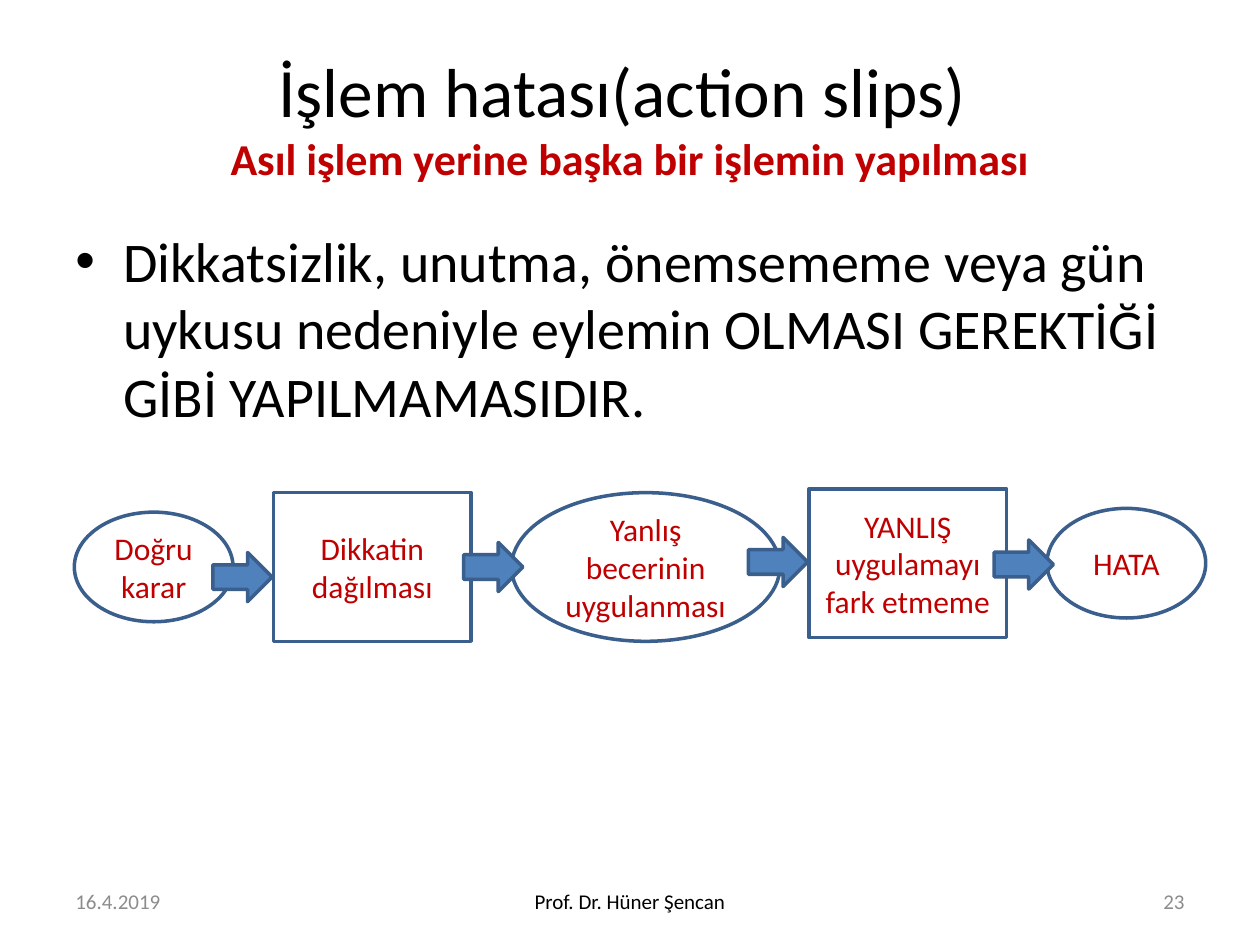
from lxml import etree
from pptx import Presentation
from pptx.dml.color import RGBColor
from pptx.enum.shapes import MSO_SHAPE
from pptx.enum.text import MSO_ANCHOR, PP_ALIGN
from pptx.oxml.ns import qn
from pptx.util import Inches, Pt

OVAL, BOX, ARROW = MSO_SHAPE.OVAL, MSO_SHAPE.RECTANGLE, MSO_SHAPE.RIGHT_ARROW
TOP, MIDDLE = MSO_ANCHOR.TOP, MSO_ANCHOR.MIDDLE
LEFT, CENTER, RIGHT = PP_ALIGN.LEFT, PP_ALIGN.CENTER, PP_ALIGN.RIGHT

FONT = "Calibri"
BLACK, RED, GRAY = "000000", "C00000", "8C8C8C"
BLUE, OUTLINE = "4F81BD", "3A5F8C"
WIDTH, HEIGHT, MARGIN = 10, 7.5, 0.5
CONTENT = WIDTH - 2 * MARGIN

TITLE = "İşlem hatası(action slips) "
SUBTITLE = "Asıl işlem yerine başka bir işlemin yapılması"
BODY = ("Dikkatsizlik, unutma, önemsememe veya gün uykusu nedeniyle "
        "eylemin OLMASI GEREKTİĞİ GİBİ YAPILMAMASIDIR.")
# text, width, alignment, colour
FOOTER = [
    ("16.4.2019", 2.33, LEFT, GRAY),
    ("Prof. Dr. Hüner Şencan", 3.17, CENTER, BLACK),
    ("23", 2.33, RIGHT, GRAY),
]
FOOTER_TOP, FOOTER_HEIGHT = 6.95, 0.4

SMALL, TALL, LARGE = (1.26, 0.87), (1.57, 1.18), (2.13, 1.18)
# text, outline, size, left, middle line
STEPS = [
    ("Doğru karar", OVAL, SMALL, 0.59, 4.5),
    ("Dikkatin dağılması", BOX, TALL, 2.17, 4.5),
    ("Yanlış becerinin uygulanması", OVAL, LARGE, 4.06, 4.5),
    ("YANLIŞ uygulamayı fark etmeme", BOX, TALL, 6.42, 4.47),
    ("HATA", OVAL, SMALL, 8.31, 4.47),
]
ARROW_SIZE = (0.47, 0.39)
ARROWS = [(1.69, 4.58), (3.68, 4.5), (5.94, 4.46), (7.89, 4.48)]  # left, middle line


def color(value):
    return RGBColor.from_string(value)


def add_run(paragraph, text, size, ink, bold=False):
    run = paragraph.add_run()
    run.text = text
    run.font.name, run.font.size, run.font.bold = FONT, Pt(size), bold
    run.font.color.rgb = color(ink)


def first_paragraph(shape, anchor, align):
    """Prepare the shape's text frame and return its first paragraph."""
    frame = shape.text_frame
    frame.word_wrap = True
    frame.vertical_anchor = anchor
    paragraph = frame.paragraphs[0]
    paragraph.alignment = align
    return paragraph


def add_text_area(slide, left, top, width, height, anchor, align):
    area = slide.shapes.add_textbox(*map(Inches, (left, top, width, height)))
    return first_paragraph(area, anchor, align)


def add_bullet(paragraph, indent):
    properties = paragraph._p.get_or_add_pPr()
    properties.set("marL", str(Inches(indent)))
    properties.set("indent", str(-Inches(indent)))
    etree.SubElement(properties, qn("a:buFont"), typeface="Arial")
    etree.SubElement(properties, qn("a:buChar"), char="•")


def add_flow_shape(slide, kind, size, left, middle, fill=None):
    width, height = size
    shape = slide.shapes.add_shape(
        kind, *map(Inches, (left, middle - height / 2, width, height)))
    shape.shadow.inherit = False
    if fill:
        shape.fill.solid()
        shape.fill.fore_color.rgb = color(fill)
    else:
        shape.fill.background()
    shape.line.color.rgb = color(OUTLINE)
    shape.line.width = Pt(2)
    return shape


def main():
    deck = Presentation()
    deck.slide_width, deck.slide_height = Inches(WIDTH), Inches(HEIGHT)
    slide = deck.slides.add_slide(deck.slide_layouts[6])

    heading = add_text_area(slide, MARGIN, 0.3, CONTENT, 1.25, MIDDLE, CENTER)
    add_run(heading, TITLE, 39.6, BLACK)
    heading.add_line_break()
    add_run(heading, SUBTITLE, 25.2, RED, bold=True)

    body = add_text_area(slide, MARGIN, 1.75, CONTENT, 4.95, TOP, LEFT)
    add_bullet(body, 0.38)
    add_run(body, BODY, 32, BLACK)

    gap = (CONTENT - sum(part[1] for part in FOOTER)) / (len(FOOTER) - 1)
    left = MARGIN
    for text, width, align, ink in FOOTER:
        part = add_text_area(slide, left, FOOTER_TOP, width, FOOTER_HEIGHT, MIDDLE, align)
        add_run(part, text, 12, ink)
        left += width + gap

    for text, kind, size, left, middle in STEPS:
        step = add_flow_shape(slide, kind, size, left, middle)
        add_run(first_paragraph(step, MIDDLE, CENTER), text, 18, RED)
    for left, middle in ARROWS:
        add_flow_shape(slide, ARROW, ARROW_SIZE, left, middle, BLUE)

    deck.save("out.pptx")


if __name__ == "__main__":
    main()
